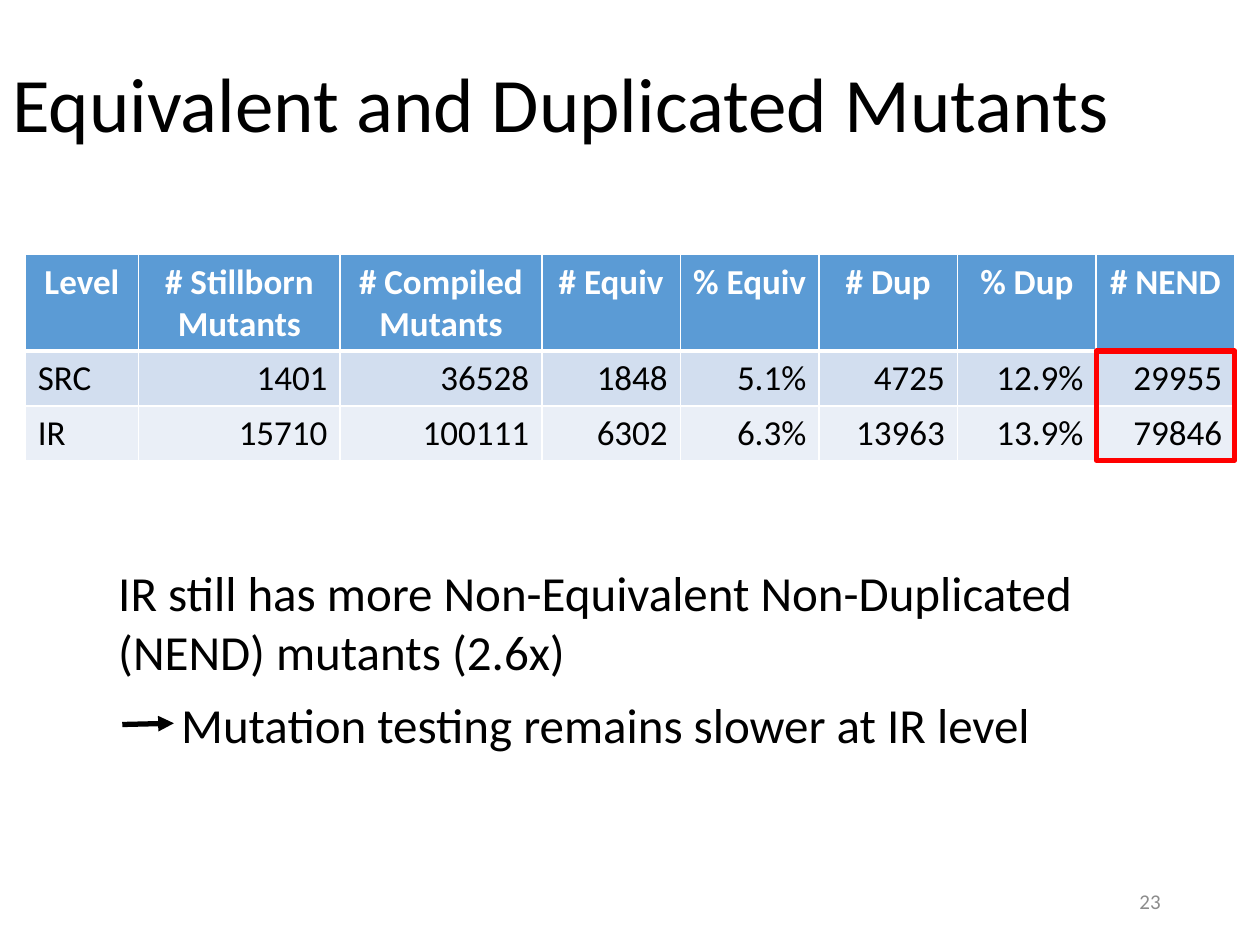
from lxml import etree
from pptx import Presentation
from pptx.dml.color import RGBColor
from pptx.enum import shapes, text
from pptx.oxml.ns import qn
from pptx.util import Pt

BLACK = RGBColor(0x00, 0x00, 0x00)
WHITE = RGBColor(0xFF, 0xFF, 0xFF)
GREY = RGBColor(0x8C, 0x8C, 0x8C)
RED = RGBColor(0xFF, 0x00, 0x00)
HEADER_BLUE = RGBColor(0x5B, 0x9B, 0xD5)
BANDS = [RGBColor(0xD2, 0xDE, 0xEF), RGBColor(0xEA, 0xEF, 0xF7)]

HEADERS = ["Level", "# Stillborn\nMutants", "# Compiled Mutants", "# Equiv",
           "% Equiv", "# Dup", "% Dup", "# NEND"]
LEVELS = [
    ["SRC", "1401", "36528", "1848", "5.1%", "4725", "12.9%", "29955"],
    ["IR", "15710", "100111", "6302", "6.3%", "13963", "13.9%", "79846"],
]
COLUMN_WIDTHS = [64.8] + [115.2] * 2 + [79.2] * 5
ROW_HEIGHTS = [55.2, 31.2, 31.2]


def write(frame, words, size, color, align=text.PP_ALIGN.LEFT, bold=False):
    frame.text = words
    for paragraph in frame.paragraphs:
        paragraph.alignment = align
        for run in paragraph.runs:
            run.font.name = "Calibri"
            run.font.size = Pt(size)
            run.font.bold = bold
            run.font.color.rgb = color


def add_words(slide, box, words, size, color, align=text.PP_ALIGN.LEFT,
              anchor=text.MSO_ANCHOR.TOP):
    frame = slide.shapes.add_textbox(*map(Pt, box)).text_frame
    frame.word_wrap = True
    frame.vertical_anchor = anchor
    write(frame, words, size, color, align)
    return frame


def add_title(slide, box):
    title = add_words(slide, box, "Equivalent and Duplicated Mutants", 44, BLACK,
                      anchor=text.MSO_ANCHOR.MIDDLE)
    title.paragraphs[0].line_spacing = 0.9


def set_borders(cell, bottom):
    properties = cell._tc.get_or_add_tcPr()
    widths = {"a:lnL": 1, "a:lnR": 1, "a:lnT": 1, "a:lnB": bottom}
    for position, (side, width) in enumerate(widths.items()):
        line = etree.Element(qn(side), w=str(Pt(width)))
        fill = etree.SubElement(line, qn("a:solidFill"))
        etree.SubElement(fill, qn("a:srgbClr"), val=str(WHITE))
        properties.insert(position, line)


def add_mutant_table(slide, box):
    left, top, width, height = box
    rows = [HEADERS] + LEVELS
    table = slide.shapes.add_table(len(rows), len(HEADERS), *map(Pt, box)).table
    for column, column_width in zip(table.columns, COLUMN_WIDTHS):
        column.width = Pt(column_width)
    for row, row_height in zip(table.rows, ROW_HEIGHTS):
        row.height = Pt(row_height)
    for r, values in enumerate(rows):
        for c, value in enumerate(values):
            cell = table.cell(r, c)
            cell.fill.solid()
            if r == 0:
                cell.fill.fore_color.rgb = HEADER_BLUE
                write(cell.text_frame, value, 20, WHITE, text.PP_ALIGN.CENTER, True)
            else:
                cell.fill.fore_color.rgb = BANDS[r - 1]
                align = text.PP_ALIGN.RIGHT if c else text.PP_ALIGN.LEFT
                write(cell.text_frame, value, 20, BLACK, align)
            set_borders(cell, bottom=1 if r else 3)

    nend_width = COLUMN_WIDTHS[-1]
    nend_height = sum(ROW_HEIGHTS[1:])
    nend = slide.shapes.add_shape(
        shapes.MSO_SHAPE.RECTANGLE, Pt(left + width - nend_width),
        Pt(top + ROW_HEIGHTS[0]), Pt(nend_width), Pt(nend_height))
    nend.shadow.inherit = False
    nend.fill.background()
    nend.line.color.rgb = RED
    nend.line.width = Pt(3)


def add_conclusion(slide, box):
    left, top, width, height = box
    finding_height = 74.9
    add_words(slide, (left, top, width, finding_height),
              "IR still has more Non-Equivalent Non-Duplicated\n(NEND) mutants (2.6x)",
              28, BLACK)
    consequence_top = top + finding_height
    consequence = add_words(
        slide, (left, consequence_top, width, height - finding_height),
        "Mutation testing remains slower at IR level", 28, BLACK)
    consequence.paragraphs[0]._p.get_or_add_pPr().set("marL", str(Pt(36)))

    arrow = slide.shapes.add_connector(
        shapes.MSO_CONNECTOR.STRAIGHT, Pt(left + 9.4), Pt(consequence_top + 20.9),
        Pt(left + 38.9), Pt(consequence_top + 20.2))
    arrow.line.color.rgb = BLACK
    arrow.line.width = Pt(3)
    etree.SubElement(arrow.line._get_or_add_ln(), qn("a:tailEnd"), type="triangle")
    etree.SubElement(arrow._element.spPr, qn("a:effectLst"))


def add_page_number(slide, box):
    add_words(slide, box, "23", 12, GREY, text.PP_ALIGN.RIGHT, text.MSO_ANCHOR.MIDDLE)


def main():
    deck = Presentation()
    deck.slide_width, deck.slide_height = Pt(720), Pt(540)
    slide = deck.slides.add_slide(deck.slide_layouts[6])
    add_title(slide, (0, 0, 720, 122.4))
    add_mutant_table(slide, (14.4, 145.4, sum(COLUMN_WIDTHS), sum(ROW_HEIGHTS)))
    add_conclusion(slide, (60.5, 318.2, 578.9, 116))
    add_page_number(slide, (508.3, 500.4, 162, 28.8))
    deck.save("out.pptx")


if __name__ == "__main__":
    main()
